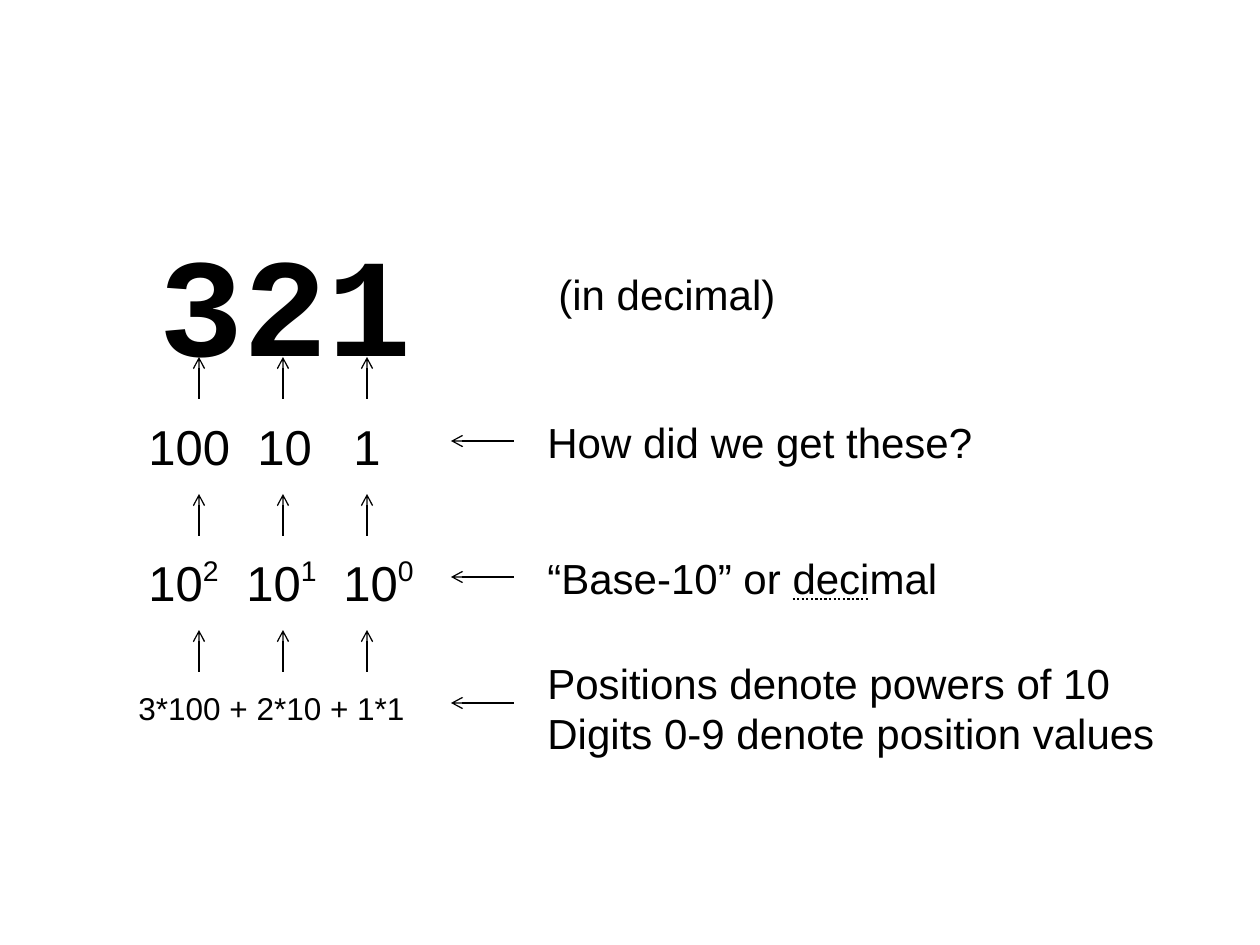
from lxml.etree import SubElement
from pptx import Presentation
from pptx.dml.color import RGBColor
from pptx.enum.shapes import MSO_CONNECTOR
from pptx.enum.text import MSO_AUTO_SIZE, MSO_UNDERLINE
from pptx.oxml.ns import qn
from pptx.util import Pt

PX = 914400 / 126
BLACK = "000000"
DIGIT_COLUMNS = [199 + 84 * i for i in range(3)]


def px(length):
    return round(length * PX)


def color(hex_value):
    return RGBColor.from_string(hex_value)


def add_text(container, paragraphs, left, top, width, height, size=24,
             font="Arial", bold=False, tabs=()):
    """Each paragraph is a list of (text, style) runs."""
    box = container.add_textbox(px(left), px(top), px(width), px(height))
    frame = box.text_frame
    frame.word_wrap = False
    frame.auto_size = MSO_AUTO_SIZE.SHAPE_TO_FIT_TEXT
    for index, runs in enumerate(paragraphs):
        paragraph = frame.add_paragraph() if index else frame.paragraphs[0]
        if tabs:
            stops = SubElement(paragraph._p.get_or_add_pPr(), qn("a:tabLst"))
            for stop in tabs:
                SubElement(stops, qn("a:tab"), pos=str(px(stop)), algn="l")
        for text, style in runs:
            run = paragraph.add_run()
            run.text = text
            run.font.name = font
            run.font.size = Pt(size)
            run.font.bold = bold
            run.font.color.rgb = color(BLACK)
            if style == "superscript":
                run._r.get_or_add_rPr().set("baseline", "40000")
            elif style == "dotted":
                run.font.underline = MSO_UNDERLINE.DOTTED_LINE


def add_arrow(container, x1, y1, x2, y2):
    arrow = container.add_connector(
        MSO_CONNECTOR.STRAIGHT, px(x1), px(y1), px(x2), px(y2))
    arrow.line.color.rgb = color(BLACK)
    arrow.line.width = Pt(0.75)
    SubElement(arrow.line._get_or_add_ln(), qn("a:tailEnd"), type="arrow")
    SubElement(arrow._element.spPr, qn("a:effectLst"))


def add_digit_row(slide, runs, left, top, width, height, arrow_top, **style):
    """Values for the three digits, with an arrow up from each one."""
    row = slide.shapes.add_group_shape().shapes
    add_text(row, [runs], left, top, width, height, **style)
    for x in DIGIT_COLUMNS:
        add_arrow(row, x, arrow_top + 42, x, arrow_top)


def add_remark(slide, paragraphs, top, width, height, arrow_y):
    """Remark on the right, with an arrow back to its row."""
    add_text(slide.shapes, paragraphs, 535, top, width, height)
    add_arrow(slide.shapes, 514, arrow_y, 451, arrow_y)


def main():
    presentation = Presentation()
    presentation.slide_width = px(1260)
    presentation.slide_height = px(945)
    slide = presentation.slides.add_slide(presentation.slide_layouts[6])

    # Number to explain
    add_text(slide.shapes, [[("(in decimal)", None)]], 546, 262, 244, 63)
    add_text(slide.shapes, [[("321", None)]], 147, 210, 280, 183,
             size=80, font="Courier New", bold=True)

    # Place values, powers and sum
    add_digit_row(slide, [("100\t10\t1", None)], 136, 410, 260, 72, 357,
                  size=28, tabs=(109, 205))
    powers = [("10", None), ("2", "superscript"),
              ("\t10", None), ("1", "superscript"),
              ("\t10", None), ("0", "superscript")]
    add_digit_row(slide, powers, 136, 546, 301, 72, 494,
                  size=28, tabs=(98, 195))
    add_digit_row(slide, [("3*100 + 2*10 + 1*1", None)], 126, 683, 294, 50,
                  630, size=18)

    # Remarks
    add_remark(slide, [[("How did we get these?", None)]], 410, 455, 63, 441)
    add_remark(slide, [[("“Base-10” or ", None), ("deci", "dotted"),
                        ("mal", None)]], 546, 420, 63, 577)
    add_remark(slide, [[("Positions denote powers of 10", None)],
                       [("Digits 0-9 denote position values", None)]],
               651, 639, 115, 703)

    presentation.save("out.pptx")


if __name__ == "__main__":
    main()
